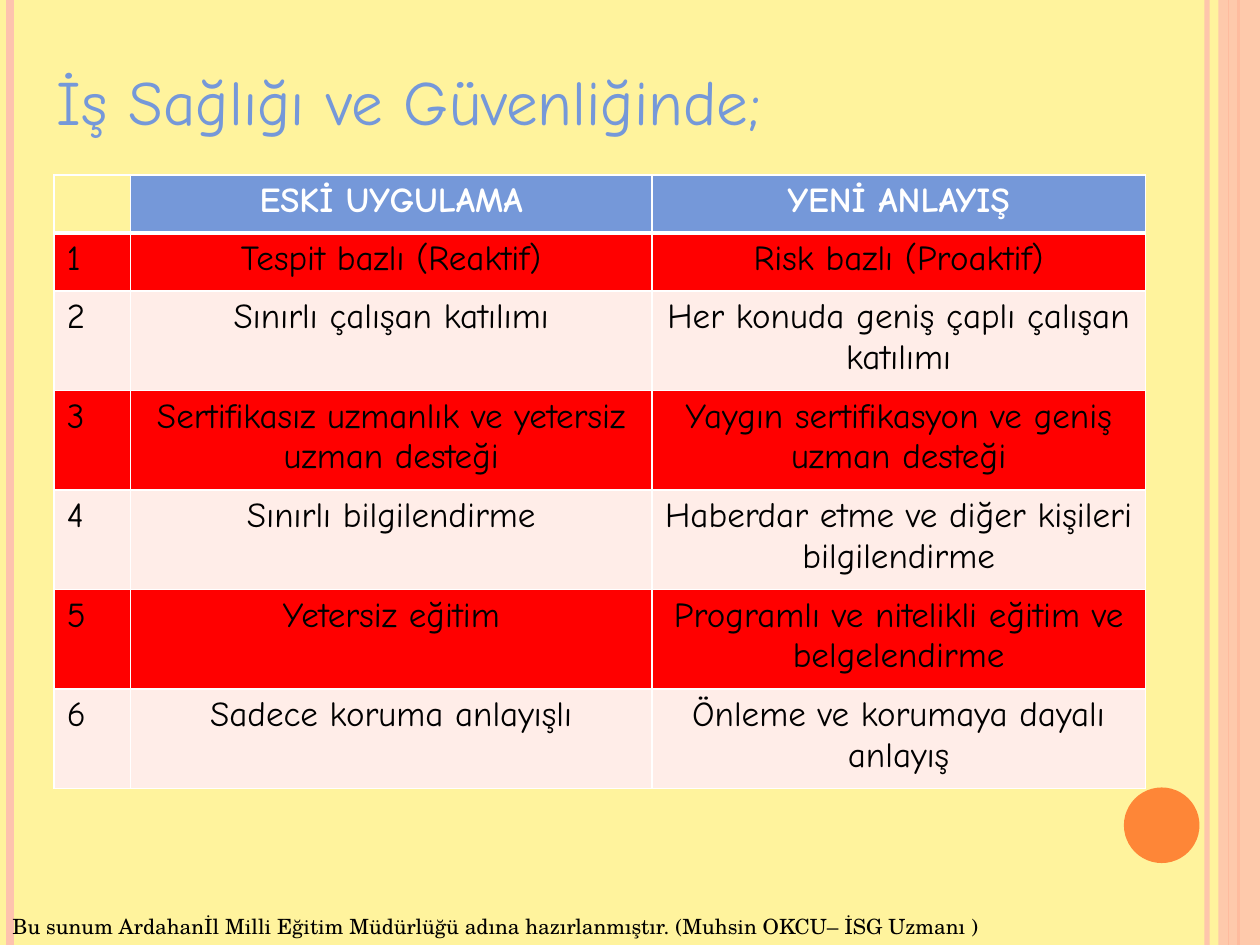
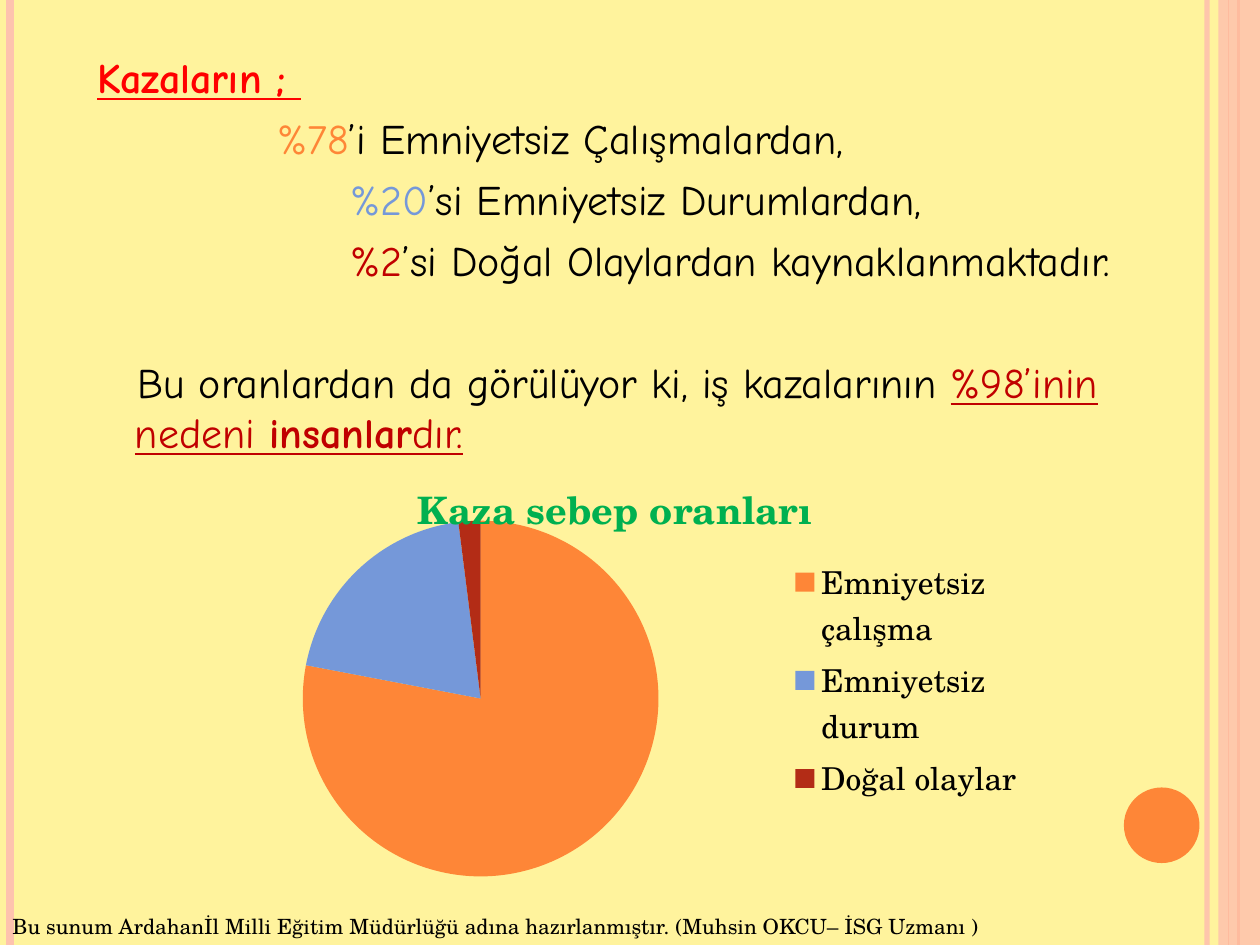
from lxml import etree
from pptx import Presentation
from pptx.chart.data import CategoryChartData
from pptx.dml.color import RGBColor
from pptx.enum.chart import XL_CHART_TYPE as CHART, XL_LEGEND_POSITION as LEGEND
from pptx.enum.shapes import MSO_CONNECTOR as CONN, MSO_SHAPE as SHAPE
from pptx.enum.text import MSO_ANCHOR as ANCHOR, MSO_AUTO_SIZE as FIT, PP_ALIGN as ALIGN
from pptx.oxml import parse_xml
from pptx.oxml.ns import nsdecls, qn
from pptx.util import Inches, Pt

COLS, ROWS = 100, 75
UNIT = Inches(0.1)
HAND, SERIF = "Comic Neue", "TeX Gyre Schola"
CREAM, PEACH, ORANGE, BLUE = "FFF39D", "FEC3AE", "FE8637", "7598D9"
RED, DARK_RED, BRICK, PINK = "FF0000", "C00000", "B32C16", "FFEDE8"
GREEN, BLACK, WHITE = "00B050", "000000", "FFFFFF"
FOOTER = ("Bu sunum Ardahanİl Milli Eğitim Müdürlüğü adına hazırlanmıştır. "
          "(Muhsin OKCU– İSG Uzmanı )")
BANDS = [(95.8, PEACH, 3, 93), (0.8, PEACH, 4.5, 100),
         (98.3, ORANGE, 1.5, 100), (97.5, ORANGE, 0.75, 100)]
PRACTICES = [
    ("", "ESKİ UYGULAMA", "YENİ ANLAYIŞ"),
    ("1", "Tespit bazlı (Reaktif)", "Risk bazlı (Proaktif)"),
    ("2", "Sınırlı çalışan katılımı", "Her konuda geniş çaplı çalışan katılımı"),
    ("3", "Sertifikasız uzmanlık ve yetersiz uzman desteği",
     "Yaygın sertifikasyon ve geniş uzman desteği"),
    ("4", "Sınırlı bilgilendirme", "Haberdar etme ve diğer kişileri bilgilendirme"),
    ("5", "Yetersiz eğitim", "Programlı ve nitelikli eğitim ve belgelendirme"),
    ("6", "Sadece koruma anlayışlı", "Önleme ve korumaya dayalı anlayış"),
]
CAUSES = [("Emniyetsiz çalışma", 78, ORANGE), ("Emniyetsiz durum", 20, BLUE),
          ("Doğal olaylar", 2, BRICK)]
ACCIDENT_TEXT = [
    (0, 0, 6, [("Kazaların ; ", RED, True, True)]),
    (14.3, 0, 6, [("%78", ORANGE), ("’i Emniyetsiz Çalışmalardan,", BLACK)]),
    (20.1, 0, 6, [("%20", BLUE), ("’si Emniyetsiz Durumlardan,", BLACK)]),
    (20.1, 0, 6, [("%2", DARK_RED),
                  ("’si Doğal Olaylardan kaynaklanmaktadır.", BLACK)]),
    (3, 0.2, 41, [("Bu oranlardan da görülüyor ki, iş kazalarının ", BLACK),
                  ("%98’inin nedeni ", DARK_RED, False, True),
                  ("insanlar", DARK_RED, True, True),
                  ("dır.", DARK_RED, False, True)]),
]


def rgb(color):
    """Turn a hex string into a colour."""
    return RGBColor.from_string(color)


def grid(*units):
    """Turn grid units into lengths."""
    return [round(u * UNIT) for u in units]


def style(font, size, color, name=HAND, bold=False, underline=False):
    """Format one font."""
    font.size, font.name, font.bold, font.underline = Pt(size), name, bold, underline
    font.color.rgb = rgb(color)


def place(sp, box):
    """Move and size a shape to a grid box."""
    sp.left, sp.top, sp.width, sp.height = grid(*box)


def set_alpha(element, percent):
    """Make the colour inside an element partly transparent."""
    color = next(element.iter(qn("a:srgbClr")))
    etree.SubElement(color, qn("a:alpha")).set("val", str(percent * 1000))


def add_solid(s, kind, box, color):
    """Add a plain filled shape without outline."""
    sp = s.shapes.add_shape(kind, *grid(*box))
    sp.shadow.inherit = False
    sp.fill.solid()
    sp.fill.fore_color.rgb = rgb(color)
    sp.line.fill.background()
    return sp


def add_frame(s):
    """Draw the side bands and the orange disc."""
    for x, color, width, alpha in BANDS:
        line = s.shapes.add_connector(CONN.STRAIGHT, *grid(x, 0, x, ROWS))
        line.line.color.rgb = rgb(color)
        line.line.width = Pt(width)
        sp_pr = line._element.spPr
        etree.SubElement(sp_pr, qn("a:effectLst"))
        if alpha < 100:
            set_alpha(sp_pr, alpha)
    strip = add_solid(s, SHAPE.RECTANGLE, (96.7, 0, 3.3, ROWS), PEACH)
    set_alpha(strip._element.spPr, 87)
    add_solid(s, SHAPE.OVAL, (89.2, 62.5, 6, 6), ORANGE)


def add_footer(s, box):
    """Write the credit line at the foot of the slide."""
    tf = s.shapes.add_textbox(*grid(*box)).text_frame
    tf.word_wrap = True
    tf.text = FOOTER
    style(tf.paragraphs[0].runs[0].font, 12, BLACK, SERIF)


def set_title(s, box, text):
    """Fill and format the title placeholder."""
    sp = s.shapes.title
    place(sp, box)
    tf = sp.text_frame
    tf.text = text
    tf.auto_size, tf.vertical_anchor = FIT.NONE, ANCHOR.MIDDLE
    p = tf.paragraphs[0]
    p.alignment = ALIGN.LEFT
    style(p.runs[0].font, 36, BLUE)


def set_borders(cell, top, bottom):
    """Draw white borders around a table cell."""
    tc_pr = cell._tc.get_or_add_tcPr()
    for side, width in zip("LRTB", (1, 1, top, bottom)):
        tc_pr.append(parse_xml(
            f'<a:ln{side} {nsdecls("a")} w="{Pt(width)}"><a:solidFill>'
            f'<a:srgbClr val="{WHITE}"/></a:solidFill></a:ln{side}>'))


def add_practice_table(s, box):
    """Compare old and new practice in a striped table."""
    table = s.shapes.add_table(len(PRACTICES), 3, *grid(*box)).table
    table.horz_banding = False
    for column, share in zip(table.columns, (0.07, 0.478, 0.452)):
        column.width = round(box[2] * share * UNIT)
    for i, texts in enumerate(PRACTICES):
        table.rows[i].height = grid(4.6 if i < 2 else 7.9)[0]
        for j, text in enumerate(texts):
            cell = table.cell(i, j)
            set_borders(cell, 3 if i == 1 else 1, 3 if i == 0 else 1)
            if not text:
                cell.fill.background()
                continue
            cell.fill.solid()
            cell.fill.fore_color.rgb = rgb(BLUE if i == 0 else RED if i % 2 else PINK)
            cell.text = text
            p = cell.text_frame.paragraphs[0]
            p.alignment = ALIGN.CENTER if j else ALIGN.LEFT
            style(p.runs[0].font, 20, BLACK if i else WHITE, bold=i == 0)


def set_accident_text(s, box):
    """Fill the body placeholder with the indented shares."""
    sp = s.placeholders[1]
    place(sp, box)
    tf = sp.text_frame
    tf.auto_size = FIT.NONE
    for i, (margin, indent, before, runs) in enumerate(ACCIDENT_TEXT):
        p = tf.add_paragraph() if i else tf.paragraphs[0]
        p.space_before = Pt(before)
        p_pr = p._p.get_or_add_pPr()
        p_pr.set("marL", str(grid(margin)[0]))
        p_pr.set("indent", str(grid(indent)[0]))
        etree.SubElement(p_pr, qn("a:buNone"))
        for text, color, *marks in runs:
            r = p.add_run()
            r.text = text
            style(r.font, 24, color, HAND, *marks)


def set_plot_layout(chart, x, y, w, h):
    """Fix the inner plot area as shares of the chart."""
    sizes = "".join(f'<c:{k} val="{v}"/>' for k, v in zip("xywh", (x, y, w, h)))
    plot_area = chart._chartSpace.chart.plotArea
    for old in plot_area.findall(qn("c:layout")):
        plot_area.remove(old)
    plot_area.insert(0, parse_xml(
        f'<c:layout {nsdecls("c")}><c:manualLayout><c:layoutTarget val="inner"/>'
        f'<c:xMode val="edge"/><c:yMode val="edge"/>{sizes}</c:manualLayout></c:layout>'))


def add_cause_chart(s, box):
    """Show the accident causes as a pie."""
    data = CategoryChartData()
    data.categories = [name for name, _, _ in CAUSES]
    data.add_series("Series 1", [value for _, value, _ in CAUSES])
    chart = s.shapes.add_chart(CHART.PIE, *grid(*box), data).chart
    style(chart.font, 18, BLACK, SERIF)
    tf = chart.chart_title.text_frame
    tf.text = "Kaza sebep oranları"
    style(tf.paragraphs[0].runs[0].font, 21.6, GREEN, SERIF, bold=True)
    chart.has_legend = True
    chart.legend.position = LEGEND.RIGHT
    chart.legend.include_in_layout = False
    plot = chart.plots[0]
    plot.vary_by_categories = True
    for i, (_, _, color) in enumerate(CAUSES):
        fill = plot.series[0].points[i].format.fill
        fill.solid()
        fill.fore_color.rgb = rgb(color)
    set_plot_layout(chart, 0.01, 0.15, 0.66, 0.78)


def add_slide(prs, layout):
    """Add a slide with the shared frame and footer."""
    s = prs.slides.add_slide(prs.slide_layouts[layout])
    add_frame(s)
    add_footer(s, (0, 72, 79.5, 3))
    return s


def main():
    """Build and save both slides."""
    prs = Presentation()
    prs.slide_width, prs.slide_height = grid(COLS, ROWS)
    fill = prs.slide_master.background.fill
    fill.solid()
    fill.fore_color.rgb = rgb(CREAM)

    s = add_slide(prs, 5)
    set_title(s, (3.5, 4.4, 80.3, 7.1), "İş Sağlığı ve Güvenliğinde;")
    add_practice_table(s, (4.3, 13.9, 86.6, 48.8))

    s = add_slide(prs, 1)
    title = s.shapes.title._element
    title.getparent().remove(title)
    set_accident_text(s, (6.7, 3.6, 90, 47.2))
    add_cause_chart(s, (15.4, 35.9, 66.9, 36.2))
    prs.save("out.pptx")


if __name__ == "__main__":
    main()
